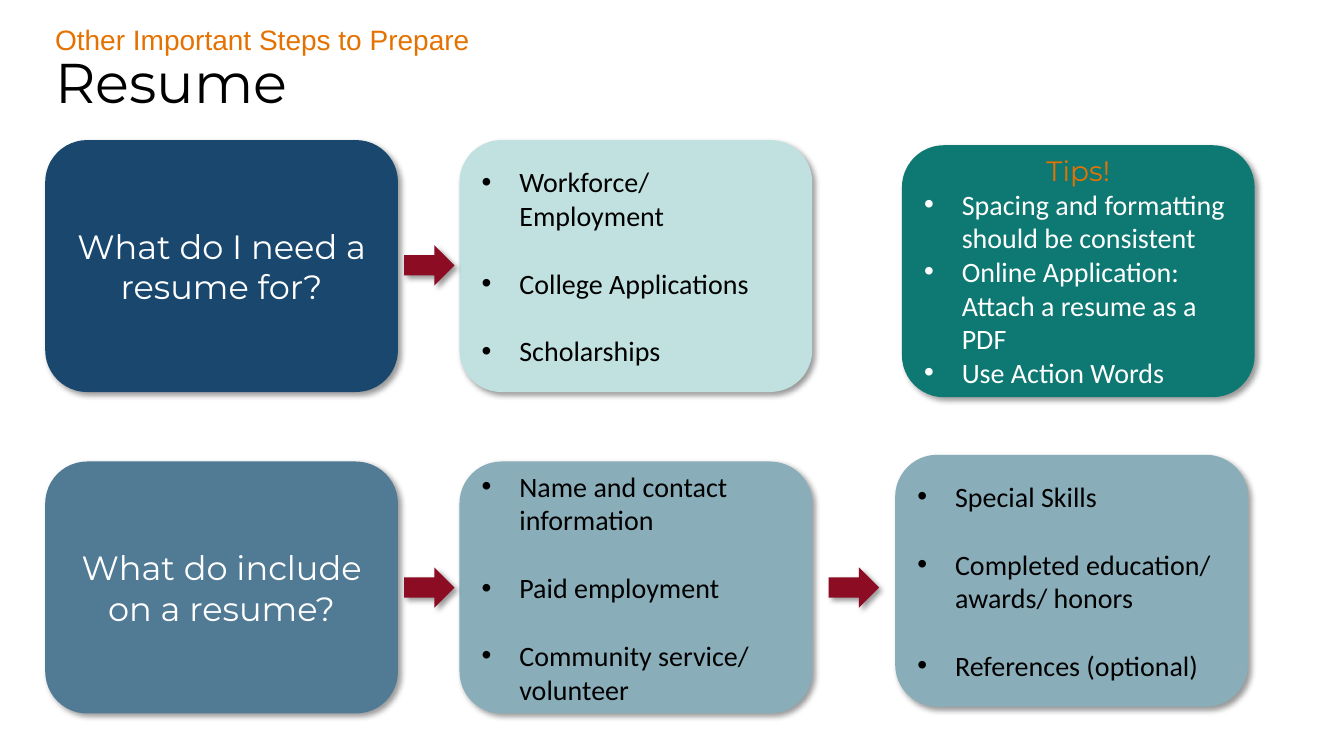
from dataclasses import dataclass

from lxml import etree
from pptx import Presentation
from pptx import util as u
from pptx.dml.color import RGBColor
from pptx.enum import shapes, text
from pptx.oxml import ns


@dataclass(frozen=True)
class Theme:
    navy: str = "1A476E"
    slate: str = "517A94"
    mist: str = "89AEB9"
    mint: str = "C0E1DF"
    teal: str = "0E7973"
    crimson: str = "8B0C23"
    orange: str = "E57200"
    black: str = "000000"
    white: str = "FFFFFF"
    heading: str = "Montserrat"
    body: str = "Calibri"
    kicker: str = "Arial"
    title_size: int = 40
    question_size: int = 24
    body_size: int = 20
    item_gap: float = 24.4  # one body line


THEME = Theme()
CARD_WIDTH, CARD_HEIGHT = 8.89, 6.35
ARROW_WIDTH, ARROW_LENGTH = 1.02, 1.27
BULLET_INDENT = 0.95
LEFT, MIDDLE = 1.14, 11.58
TOP_ROW, BOTTOM_ROW = 3.53, 11.63


@dataclass(frozen=True)
class Card:
    left: float
    top: float
    fill: str
    color: str
    heading: str = ""
    heading_color: str = THEME.white
    heading_size: int = THEME.question_size
    items: tuple[str, ...] = ()
    gap: float = 0


@dataclass(frozen=True)
class Arrow:
    left: float
    top: float


@dataclass(frozen=True)
class Headline:
    top: float
    width: float
    height: float
    wording: str
    font: str
    size: int
    color: str


HEADLINES = [
    Headline(0.43, 24.69, 1.12, "Other Important Steps to Prepare",
             THEME.kicker, THEME.body_size, THEME.orange),
    Headline(1.07, 29.62, 1.96, "Resume",
             THEME.heading, THEME.title_size, THEME.black),
]
CARDS = [
    Card(LEFT, BOTTOM_ROW, THEME.slate, THEME.white, "What do include on a resume?"),
    Card(LEFT, TOP_ROW, THEME.navy, THEME.white, "What do I need a resume for?"),
    Card(MIDDLE, BOTTOM_ROW, THEME.mist, THEME.black, gap=THEME.item_gap,
         items=("Name and contact information", "Paid employment",
                "Community service/ volunteer")),
    Card(MIDDLE, TOP_ROW, THEME.mint, THEME.black, gap=THEME.item_gap,
         items=("Workforce/ Employment", "College Applications", "Scholarships")),
    Card(22.56, 11.46, THEME.mist, THEME.black, gap=THEME.item_gap,
         items=("Special Skills", "Completed education/ awards/ honors",
                "References (optional)")),
    Card(22.73, 3.66, THEME.teal, THEME.white, "Tips!", THEME.orange, THEME.body_size,
         items=("Spacing and formatting should be consistent",
                "Online Application: Attach a resume as a PDF",
                "Use Action Words")),
]
ARROWS = [Arrow(10.31, 14.17), Arrow(10.31, 6.05), Arrow(21.01, 14.17)]


def add_run(paragraph, wording: str, font: str, size: int, color: str) -> None:
    run = paragraph.add_run()
    run.text = wording
    run.font.name = font
    run.font.size = u.Pt(size)
    run.font.color.rgb = RGBColor.from_string(color)


def add_bullet(paragraph) -> None:
    properties = paragraph._p.get_or_add_pPr()
    indent = u.Cm(BULLET_INDENT)
    properties.set("marL", str(indent))
    properties.set("indent", str(-indent))
    etree.SubElement(properties, ns.qn("a:buFont"), typeface="Arial")
    etree.SubElement(properties, ns.qn("a:buChar"), char="•")


def add_solid(slide, kind, left: float, top: float, width: float, height: float,
              fill: str):
    """Add a borderless filled shape with a soft shadow to the lower right."""
    solid = slide.shapes.add_shape(kind, u.Cm(left), u.Cm(top), u.Cm(width), u.Cm(height))
    solid.fill.solid()
    solid.fill.fore_color.rgb = RGBColor.from_string(fill)
    solid.line.fill.background()
    solid.shadow.inherit = False
    effects = solid._element.spPr.find(ns.qn("a:effectLst"))
    shadow = etree.SubElement(effects, ns.qn("a:outerShdw"), blurRad=str(u.Pt(4)),
                              dist=str(u.Pt(3)), dir="2700000", algn="tl",
                              rotWithShape="0")
    tint = etree.SubElement(shadow, ns.qn("a:srgbClr"), val=THEME.black)
    etree.SubElement(tint, ns.qn("a:alpha"), val="40000")
    return solid


def draw_headline(slide, headline: Headline) -> None:
    box = slide.shapes.add_textbox(u.Cm(LEFT), u.Cm(headline.top),
                                   u.Cm(headline.width), u.Cm(headline.height))
    box.text_frame.word_wrap = True
    box.text_frame.auto_size = text.MSO_AUTO_SIZE.SHAPE_TO_FIT_TEXT
    add_run(box.text_frame.paragraphs[0], headline.wording, headline.font,
            headline.size, headline.color)


def draw_card(slide, card: Card) -> None:
    frame = add_solid(slide, shapes.MSO_SHAPE.ROUNDED_RECTANGLE, card.left, card.top,
                      CARD_WIDTH, CARD_HEIGHT, card.fill).text_frame
    frame.word_wrap = True
    frame.vertical_anchor = text.MSO_ANCHOR.MIDDLE
    paragraph = frame.paragraphs[0]
    if card.heading:
        paragraph.alignment = text.PP_ALIGN.CENTER
        add_run(paragraph, card.heading, THEME.heading, card.heading_size,
                card.heading_color)
    for index, item in enumerate(card.items):
        if index or card.heading:
            paragraph = frame.add_paragraph()
        paragraph.alignment = text.PP_ALIGN.LEFT
        add_bullet(paragraph)
        if index and card.gap:
            paragraph.space_before = u.Pt(card.gap)
        add_run(paragraph, item, THEME.body, THEME.body_size, card.color)


def draw_arrow(slide, arrow: Arrow) -> None:
    pointer = add_solid(slide, shapes.MSO_SHAPE.DOWN_ARROW, arrow.left, arrow.top,
                        ARROW_WIDTH, ARROW_LENGTH, THEME.crimson)
    pointer.rotation = 270


def main() -> None:
    deck = Presentation()
    deck.slide_width, deck.slide_height = u.Cm(33.87), u.Cm(19.05)
    slide = deck.slides.add_slide(deck.slide_layouts[6])

    # Title block
    for headline in HEADLINES:
        draw_headline(slide, headline)
    # Questions, answers and tips
    for card in CARDS:
        draw_card(slide, card)
    # Arrows from question to answers
    for arrow in ARROWS:
        draw_arrow(slide, arrow)

    deck.save("out.pptx")


if __name__ == "__main__":
    main()
